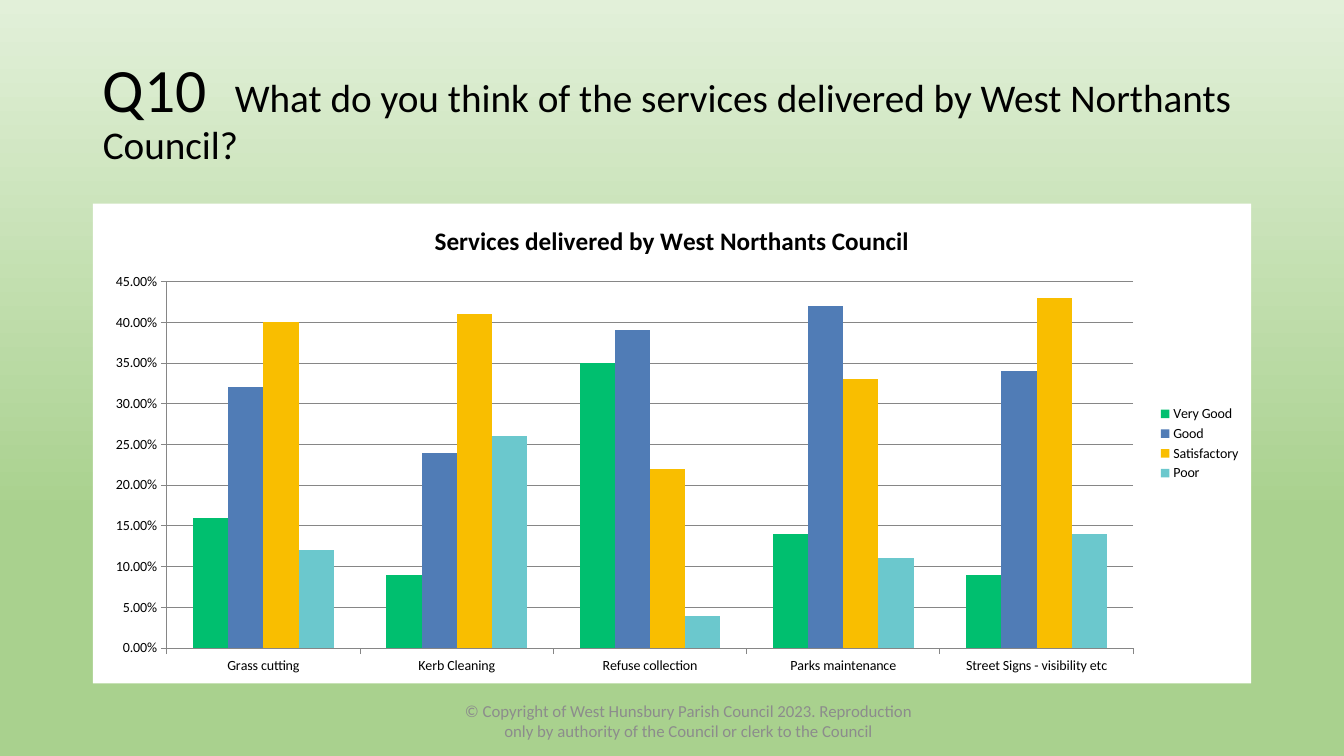
"""Builds the Q10 survey slide on services delivered by the council."""
from pptx import Presentation
from pptx.chart.data import CategoryChartData
from pptx.dml.color import RGBColor
from pptx.enum.chart import XL_CHART_TYPE as ChartType, XL_LEGEND_POSITION as LegendPos
from pptx.enum.chart import XL_TICK_MARK as Tick
from pptx.enum.text import MSO_ANCHOR as Anchor, MSO_AUTO_SIZE as AutoSize, PP_ALIGN as Align
from pptx.oxml import parse_xml
from pptx.oxml.ns import nsdecls, qn
from pptx.util import Inches, Pt

BLACK = RGBColor(0x00, 0x00, 0x00)
WHITE = RGBColor(0xFF, 0xFF, 0xFF)
FOOTER_GREY = RGBColor(0x8C, 0x8C, 0x8C)
AXIS_GREY = RGBColor(0x86, 0x86, 0x86)
PALE_GREEN = RGBColor(0xE2, 0xF0, 0xD9)
LEAF_GREEN = RGBColor(0xA9, 0xD1, 0x8E)
FONT = "Calibri"

QUESTION = [("Q10  ", 44),
            ("What do you think of the services delivered by West Northants Council?", 28)]
COPYRIGHT = [("© Copyright of West Hunsbury Parish Council 2023. Reproduction only by "
              "authority of the Council or clerk to the Council", 12)]
CHART_TITLE = [("Services delivered by West Northants Council", 18)]
SERVICES = ["Grass cutting", "Kerb Cleaning", "Refuse collection", "Parks maintenance",
            "Street Signs - visibility etc"]
RATINGS = [
    ("Very Good", (0.16, 0.09, 0.35, 0.14, 0.09), RGBColor(0x00, 0xBF, 0x6F)),
    ("Good", (0.32, 0.24, 0.39, 0.42, 0.34), RGBColor(0x50, 0x7C, 0xB6)),
    ("Satisfactory", (0.4, 0.41, 0.22, 0.33, 0.43), RGBColor(0xF9, 0xBE, 0x00)),
    ("Poor", (0.12, 0.26, 0.04, 0.11, 0.14), RGBColor(0x6B, 0xC8, 0xCD)),
]

WIDTH, HEIGHT = 13.33, 7.5
MARGIN = 0.92
CONTENT_WIDTH = WIDTH - 2 * MARGIN
TITLE_BOX = [Inches(n) for n in (MARGIN, 0.4, CONTENT_WIDTH, 1.45)]
CHART_BOX = [Inches(n) for n in (MARGIN, 2.02, CONTENT_WIDTH, 4.76)]
FOOTER_BOX = [Inches(n) for n in (4.42, 6.95, 4.82, 0.4)]


def write(frame, runs, color=BLACK, align=Align.LEFT, spacing=None, bold=False):
    """Fills the first paragraph of a text frame with (text, size) runs."""
    paragraph = frame.paragraphs[0]
    paragraph.alignment = align
    paragraph.line_spacing = spacing
    for text, size in runs:
        run = paragraph.add_run()
        run.text = text
        run.font.name, run.font.size, run.font.bold = FONT, Pt(size), bold
        run.font.color.rgb = color


def paint_background(slide):
    """Runs the green gradient down the slide."""
    fill = slide.background.fill
    fill.gradient()
    fill.gradient_angle = 270
    for stop, (position, color) in zip(fill.gradient_stops, [(0, PALE_GREEN), (0.68, LEAF_GREEN)]):
        stop.position = position
        stop.color.rgb = color


def add_ratings_chart(slide):
    """Adds the clustered columns of ratings per service."""
    data = CategoryChartData(number_format="0.00%")
    data.categories = SERVICES
    for rating, shares, _ in RATINGS:
        data.add_series(rating, shares)
    chart = slide.shapes.add_chart(ChartType.COLUMN_CLUSTERED, *CHART_BOX, data).chart
    chart.font.name, chart.font.size = FONT, Pt(10)
    chart.font.color.rgb = BLACK
    write(chart.chart_title.text_frame, CHART_TITLE, align=Align.CENTER, bold=True)
    chart.has_legend = True
    chart.legend.position = LegendPos.RIGHT
    chart.legend.include_in_layout = False

    plot = chart.plots[0]
    plot.gap_width, plot.overlap = 150, 0
    plot.vary_by_categories = False
    for series, (_, _, color) in zip(plot.series, RATINGS):
        series.format.fill.solid()
        series.format.fill.fore_color.rgb = color
        series.invert_if_negative = False

    shares_axis = chart.value_axis
    shares_axis.minimum_scale, shares_axis.maximum_scale = 0, 0.45
    shares_axis.major_unit = 0.05
    shares_axis.has_major_gridlines = True
    shares_axis.tick_labels.number_format = "0.00%"
    shares_axis.tick_labels.number_format_is_linked = False
    for axis in (chart.category_axis, shares_axis):
        axis.major_tick_mark = Tick.OUTSIDE
    for part in (chart.category_axis, shares_axis, shares_axis.major_gridlines):
        part.format.line.color.rgb = AXIS_GREY
        part.format.line.width = Pt(0.75)

    panel = parse_xml(
        f'<c:spPr {nsdecls("c", "a")}><a:solidFill><a:srgbClr val="{WHITE}"/></a:solidFill>'
        "<a:ln><a:noFill/></a:ln></c:spPr>")
    chart._chartSpace.find(qn("c:chart")).addnext(panel)


def main():
    """Assembles and saves the slide."""
    deck = Presentation()
    deck.slide_width, deck.slide_height = Inches(WIDTH), Inches(HEIGHT)
    slide = deck.slides.add_slide(deck.slide_layouts[5])
    paint_background(slide)

    title = slide.shapes.title
    title.left, title.top, title.width, title.height = TITLE_BOX
    title.text_frame.auto_size = AutoSize.NONE
    title.text_frame.vertical_anchor = Anchor.MIDDLE
    write(title.text_frame, QUESTION, spacing=0.9)

    add_ratings_chart(slide)

    footer = slide.shapes.add_textbox(*FOOTER_BOX).text_frame
    footer.word_wrap = True
    footer.vertical_anchor = Anchor.MIDDLE
    write(footer, COPYRIGHT, color=FOOTER_GREY, align=Align.CENTER)

    deck.save("out.pptx")


if __name__ == "__main__":
    main()
